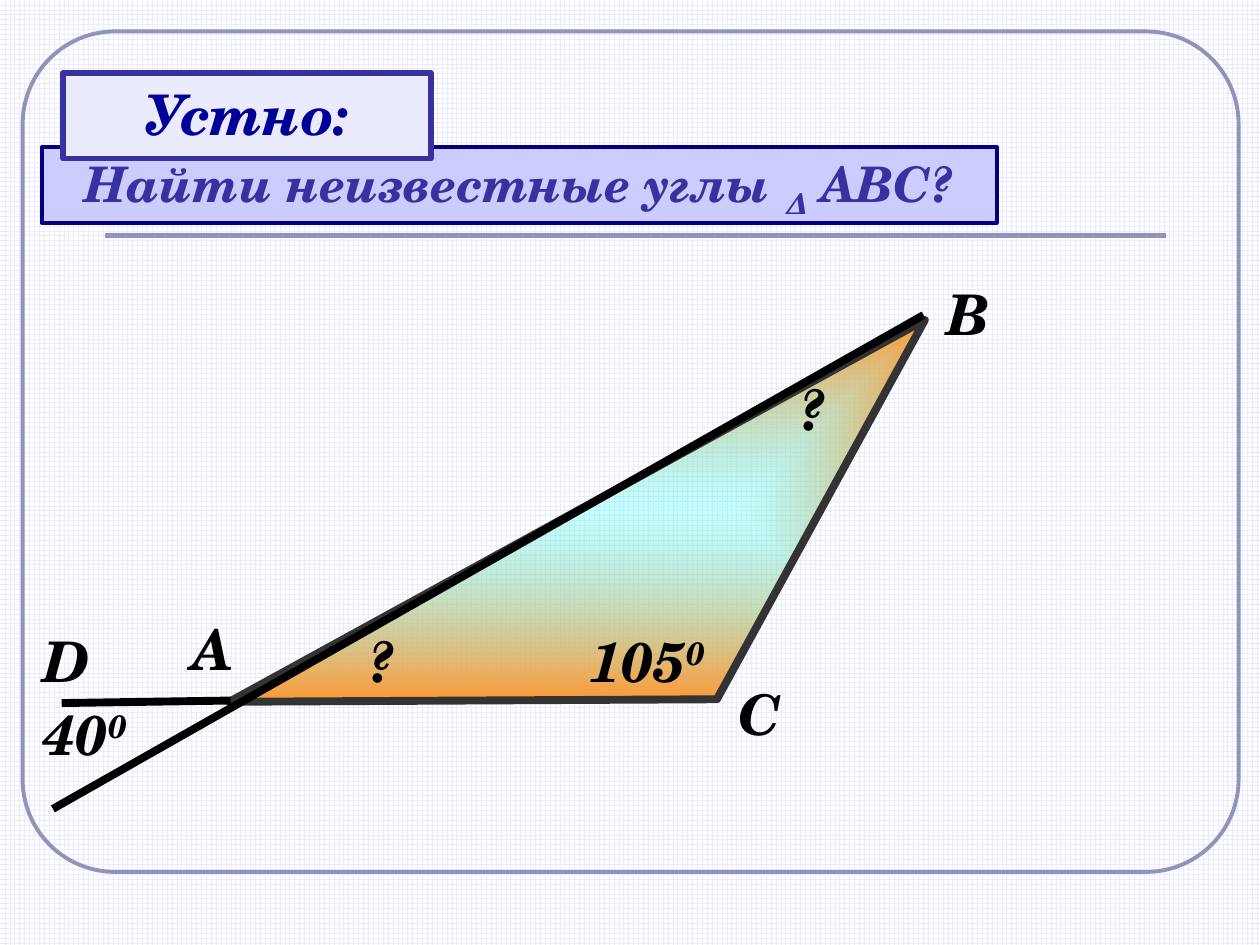
from dataclasses import dataclass, field
from typing import Optional

from lxml import etree
from pptx import Presentation
from pptx import util as u
from pptx.dml.color import RGBColor
from pptx.enum import dml, shapes, text
from pptx.oxml.ns import nsdecls, qn


@dataclass(frozen=True)
class Theme:
    font: str = "TeX Gyre Schola"
    big: int = 32
    mid: int = 28
    ink: str = "000000"
    side: str = "333333"
    frame: str = "9094B8"
    grid: str = "EBEBFF"
    paper: str = "FFFFFF"
    violet: str = "3732A0"
    navy: str = "000080"
    blue: str = "000099"
    lilac: str = "CCCCFF"
    core: str = "66FFFF"
    rim: str = "FF9933"
    thick: float = 4.5


T = Theme()


@dataclass(frozen=True)
class Run:
    words: str
    base: int = 0  # baseline shift in percent


@dataclass(frozen=True)
class Label:
    left: float
    top: float
    width: float
    runs: tuple[Run, ...]


@dataclass(frozen=True)
class Panel:
    box: tuple[float, float, float, float]
    line: str
    weight: float
    kind: shapes.MSO_SHAPE = shapes.MSO_SHAPE.RECTANGLE
    fill: Optional[str] = None
    runs: tuple[Run, ...] = ()
    size: int = T.big
    color: str = T.ink
    adjust: list[float] = field(default_factory=list)


def rgb(code: str) -> RGBColor:
    return RGBColor.from_string(code)


def stroke(shape, color: str, weight: float) -> None:
    shape.line.color.rgb = rgb(color)
    shape.line.width = u.Pt(weight)


def write(frame, runs: tuple[Run, ...], size: int, color: str, align) -> None:
    layout = {
        "word_wrap": True,
        "auto_size": text.MSO_AUTO_SIZE.SHAPE_TO_FIT_TEXT,
        "vertical_anchor": text.MSO_ANCHOR.TOP,
    }
    for name, value in layout.items():
        setattr(frame, name, value)
    para = frame.paragraphs[0]
    para.alignment = align
    style = {"name": T.font, "size": u.Pt(size), "bold": True, "italic": True}
    for item in runs:
        run = para.add_run()
        run.text = item.words
        for name, value in style.items():
            setattr(run.font, name, value)
        run.font.color.rgb = rgb(color)
        if item.base:
            run._r.get_or_add_rPr().set("baseline", str(item.base * 1000))


def add_panel(slide, panel: Panel) -> None:
    shape = slide.shapes.add_shape(panel.kind, *map(u.Inches, panel.box))
    shape.shadow.inherit = False
    for spot, value in enumerate(panel.adjust):
        shape.adjustments[spot] = value
    if panel.fill:
        shape.fill.solid()
        shape.fill.fore_color.rgb = rgb(panel.fill)
    else:
        shape.fill.background()
    stroke(shape, panel.line, panel.weight)
    if panel.runs:
        write(shape.text_frame, panel.runs, panel.size, panel.color,
              text.PP_ALIGN.CENTER)


def add_label(slide, label: Label) -> None:
    box = slide.shapes.add_textbox(
        *map(u.Inches, (label.left, label.top, label.width, 0.63)))
    write(box.text_frame, label.runs, T.big, T.ink, text.PP_ALIGN.LEFT)


def add_line(slide, start: tuple, end: tuple, color: str, weight: float) -> None:
    line = slide.shapes.add_connector(
        shapes.MSO_CONNECTOR.STRAIGHT, *map(u.Inches, start + end))
    stroke(line, color, weight)
    etree.SubElement(line._element.spPr, qn("a:effectLst"))


def add_path(slide, points: list[tuple], color: str, close: bool):
    spots = [(u.Inches(x), u.Inches(y)) for x, y in points]
    pen = slide.shapes.build_freeform(*spots[0])
    pen.add_line_segments(spots[1:], close=close)
    shape = pen.convert_to_shape()
    shape.shadow.inherit = False
    shape.fill.background()
    stroke(shape, color, T.thick)
    return shape


def glow(shape) -> None:
    """Fill from a translucent core to a solid rim."""
    grad = etree.fromstring(
        f'<a:gradFill {nsdecls("a")} rotWithShape="1"><a:gsLst>'
        f'<a:gs pos="0"><a:srgbClr val="{T.core}"><a:alpha val="36000"/>'
        f'</a:srgbClr></a:gs>'
        f'<a:gs pos="100000"><a:srgbClr val="{T.rim}"/></a:gs></a:gsLst>'
        '<a:path path="rect"><a:fillToRect l="50000" t="50000" r="50000" '
        'b="50000"/></a:path></a:gradFill>')
    props = shape._element.spPr
    props.replace(props.find(qn("a:noFill")), grad)


FRAME = Panel((0.18, 0.25, 9.65, 6.67), T.frame, 2.25,
              shapes.MSO_SHAPE.ROUNDED_RECTANGLE, adjust=[0.11])
TASK = Panel((0.33, 1.17, 7.58, 0.6), T.navy, 2.25, fill=T.lilac,
             runs=(Run("Найти неизвестные углы "), Run("Δ", -25), Run(" АВС?")),
             size=T.mid, color=T.violet)
TITLE = Panel((0.5, 0.58, 2.92, 0.68), T.violet, 3, fill=T.grid,
              runs=(Run("Устно:"),), color=T.blue)

ZERO = Run("0", 30)
LABELS = [
    Label(1.42, 4.83, 0.52, (Run("А"),)),
    Label(7.42, 2.17, 0.52, (Run("В"),)),
    Label(5.76, 5.34, 0.52, (Run("С"),)),
    Label(0.25, 4.92, 0.52, (Run("D"),)),
    Label(4.58, 4.92, 1.35, (Run("105"), ZERO)),
    Label(0.25, 5.5, 1.1, (Run("40"), ZERO)),
    Label(6.25, 2.92, 1.1, (Run("?"),)),
    Label(2.83, 4.92, 1.1, (Run("?"),)),
]


def main() -> None:
    deck = Presentation()
    deck.slide_width, deck.slide_height = u.Inches(10), u.Inches(7.5)
    slide = deck.slides.add_slide(deck.slide_layouts[6])

    # Squared paper
    paper = slide.background.fill
    paper.patterned()
    paper.pattern = dml.MSO_PATTERN.LARGE_GRID
    paper.fore_color.rgb = rgb(T.grid)
    paper.back_color.rgb = rgb(T.paper)

    # Frame and rule
    add_panel(slide, FRAME)
    add_line(slide, (0.83, 1.87), (9.25, 1.87), T.frame, 3)

    # Triangle and its extended sides
    glow(add_path(slide, [(1.82, 5.57), (5.69, 5.55), (7.34, 2.54)],
                  T.side, True))
    add_path(slide, [(1.83, 5.56), (0.49, 5.58)], T.ink, False)
    add_line(slide, (7.33, 2.5), (0.42, 6.42), T.ink, T.thick)

    # Vertices and angles
    for label in LABELS:
        add_label(slide, label)

    # Headings
    for panel in (TASK, TITLE):
        add_panel(slide, panel)

    deck.save("out.pptx")


if __name__ == "__main__":
    main()
